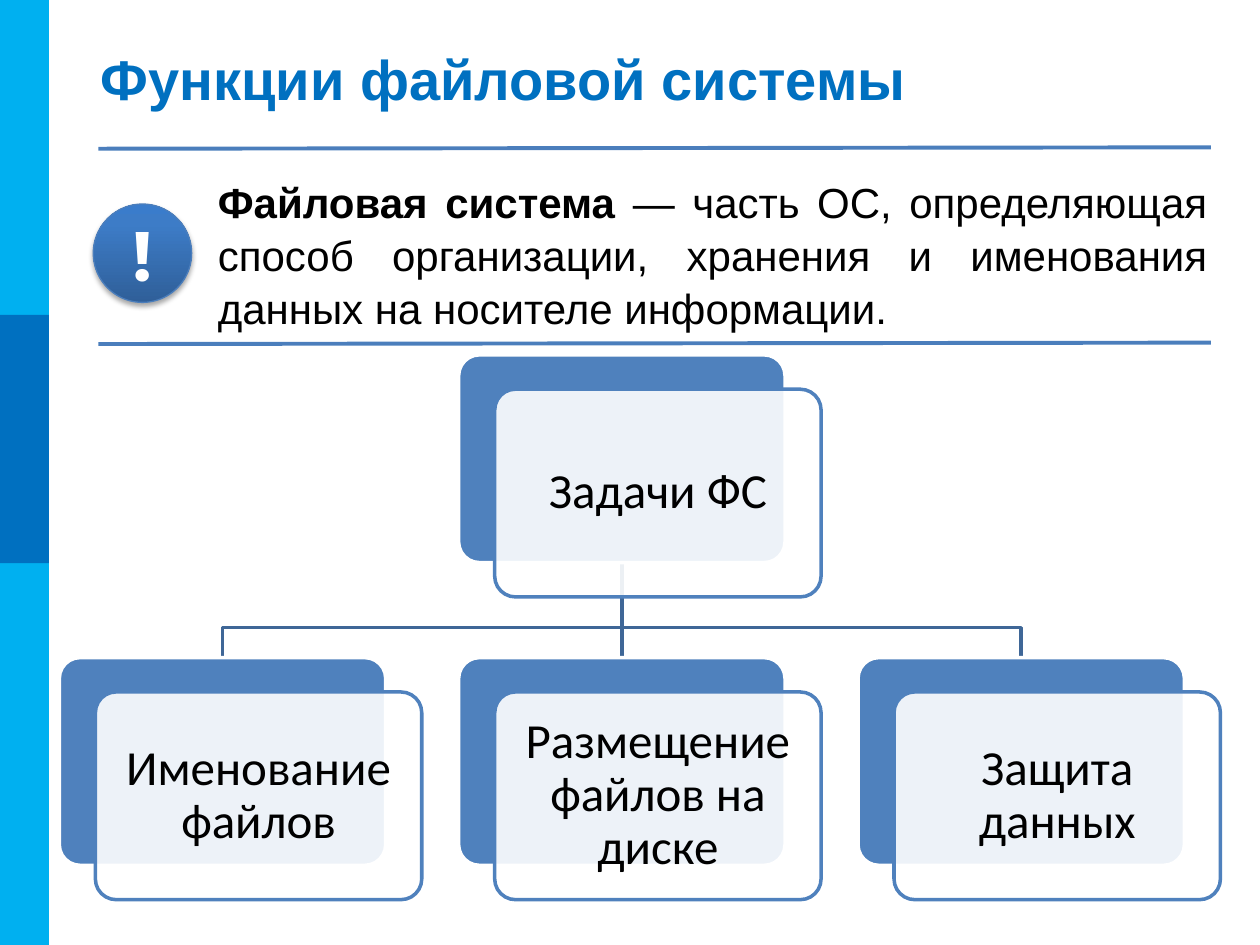
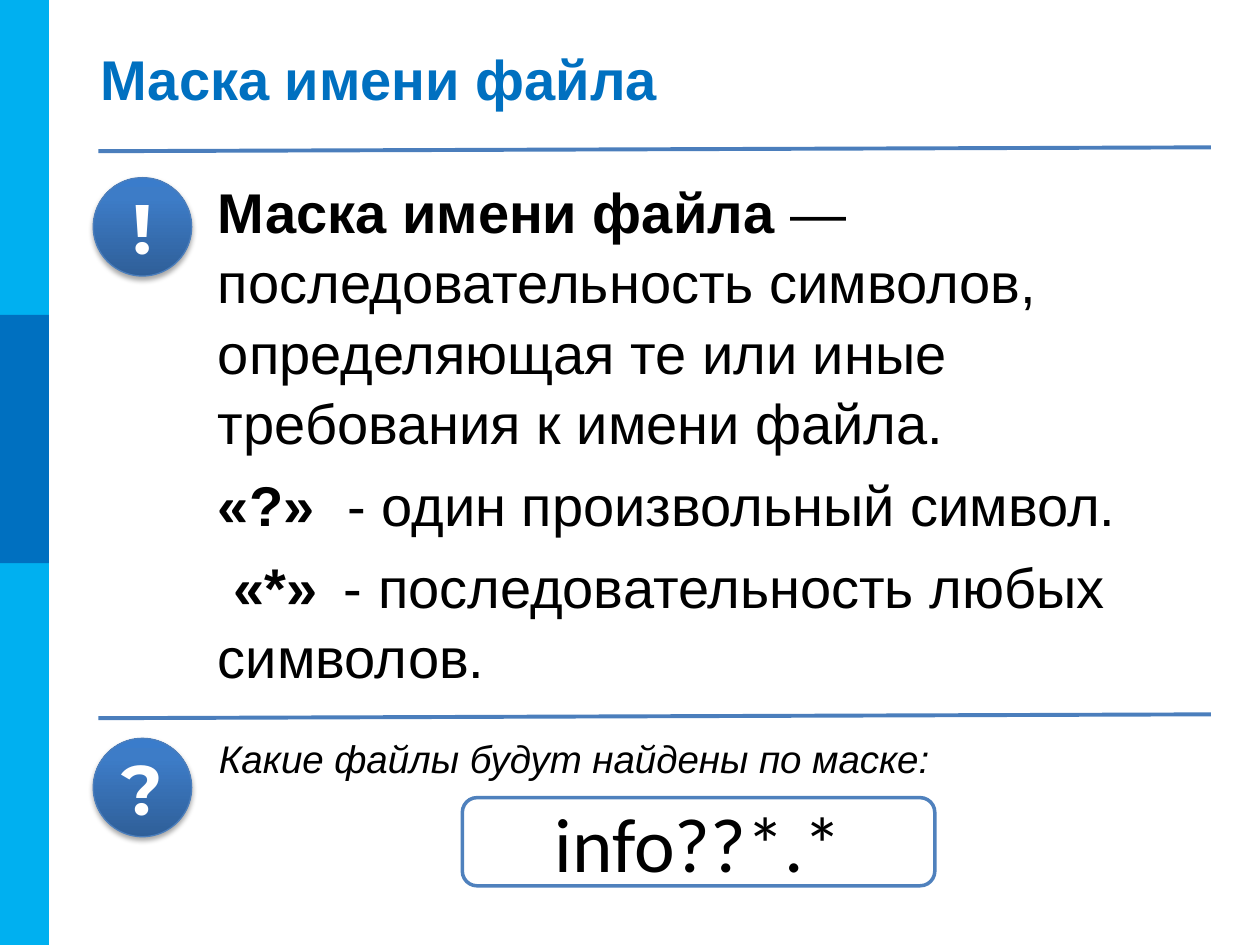
from copy import deepcopy
from dataclasses import dataclass, field

from lxml import etree
from pptx import Presentation
from pptx.dml.color import RGBColor
from pptx.enum import shapes, text
from pptx.oxml import ns
from pptx.util import Pt


@dataclass(frozen=True)
class Theme:
    sky: str = "00B0F0"
    blue: str = "0070C0"
    rule: str = "4B7EBC"
    card: str = "4F81BD"
    branch: str = "3F6797"
    white: str = "FFFFFF"
    black: str = "000000"
    badge_stops: tuple = ((0, "2F5F99"), (0.8, "3D7CC7"), (1, "3A7CCB"))
    body_font: str = "Arial"
    card_font: str = "Calibri"
    badge_font: str = "Montserrat"
    title_size: float = 32
    definition_size: float = 24
    question_size: float = 22
    card_size: float = 28
    symbol_size: float = 40
    mask_size: float = 44


THEME = Theme()


@dataclass(frozen=True)
class Box:
    """Position and size in points."""
    left: float
    top: float
    width: float
    height: float

    def emu(self) -> list:
        return [Pt(v) for v in (self.left, self.top, self.width, self.height)]

    def shifted(self, dx: float, dy: float) -> "Box":
        return Box(self.left + dx, self.top + dy, self.width, self.height)

    @property
    def middle(self) -> float:
        return self.left + self.width / 2

    @property
    def bottom(self) -> float:
        return self.top + self.height


@dataclass(frozen=True)
class Style:
    size: float
    font: str = THEME.body_font
    color: str = THEME.black
    bold: bool = False
    italic: bool = False
    align: text.PP_ALIGN = text.PP_ALIGN.LEFT
    spacing: float = 1.0


@dataclass(frozen=True)
class Line:
    """A paragraph: a bold lead, then plain words."""
    rest: str
    lead: str = ""
    indent: float = 0
    tab: float = 0


@dataclass(frozen=True)
class Badge:
    symbol: str
    top: float


@dataclass(frozen=True)
class Frame:
    """What every slide carries besides its own content."""
    title: str
    rules: list = field(default_factory=list)  # (left y, right y)
    badges: list = field(default_factory=list)


CENTER, JUSTIFY = text.PP_ALIGN.CENTER, text.PP_ALIGN.JUSTIFY
TITLE = Style(THEME.title_size, color=THEME.blue, bold=True)
DEFINITION = Style(THEME.definition_size, align=JUSTIFY, spacing=1.05)
MASK_NOTES = Style(THEME.title_size, spacing=1.05)
QUESTION = Style(THEME.question_size, italic=True, align=JUSTIFY)
SYMBOL = Style(THEME.symbol_size, THEME.badge_font, THEME.white, True, align=CENTER)
CARD = Style(THEME.card_size, THEME.card_font, align=CENTER, spacing=0.9)
MASK = Style(THEME.mask_size, THEME.card_font, align=CENTER)


def rgb(color: str) -> RGBColor:
    return RGBColor.from_string(color)


def add_xml(parent, tag: str, **attributes):
    child = etree.SubElement(parent, ns.qn(tag))
    for key, value in attributes.items():
        child.set(key, str(value))
    return child


# Text

def write(shape, lines: list, style: Style, inset: tuple = (7.2, 3.6), middle: bool = False) -> None:
    frame = shape.text_frame
    frame.word_wrap = True
    frame.margin_left = frame.margin_right = Pt(inset[0])
    frame.margin_top = frame.margin_bottom = Pt(inset[1])
    frame.vertical_anchor = text.MSO_ANCHOR.MIDDLE if middle else text.MSO_ANCHOR.TOP
    for number, line in enumerate(lines):
        paragraph = frame.add_paragraph() if number else frame.paragraphs[0]
        properties = paragraph._p.get_or_add_pPr()
        if line.indent:
            properties.set("indent", str(Pt(line.indent)))
        if line.tab:
            stops = add_xml(properties, "a:tabLst")
            add_xml(stops, "a:tab", pos=Pt(line.tab), algn="l")
        if line.lead:
            lead = paragraph.add_run()
            lead.text = line.lead
            lead.font.bold = True
        paragraph.add_run().text = line.rest
        paragraph.alignment = style.align
        paragraph.line_spacing = style.spacing
        if number:
            paragraph.space_before = Pt(style.size * 0.2)
        font = paragraph.font
        font.name, font.size = style.font, Pt(style.size)
        font.bold, font.italic = style.bold, style.italic
        font.color.rgb = rgb(style.color)


def add_text(slide, box: Box, lines: list, style: Style, middle: bool = False) -> None:
    write(slide.shapes.add_textbox(*box.emu()), lines, style, middle=middle)


# Shapes

def set_line(shape, color: str, width: float) -> None:
    shape.line.color.rgb = rgb(color)
    shape.line.width = Pt(width)


def add_shape(slide, kind, box: Box, fill: str, line: str = "", width: float = 2):
    shape = slide.shapes.add_shape(kind, *box.emu())
    shape.shadow.inherit = False
    shape.fill.solid()
    shape.fill.fore_color.rgb = rgb(fill)
    if line:
        set_line(shape, line, width)
    else:
        shape.line.fill.background()
    return shape


def add_line(slide, start: tuple, end: tuple, color: str, width: float):
    line = slide.shapes.add_connector(
        shapes.MSO_CONNECTOR.STRAIGHT, *[Pt(v) for v in (*start, *end)])
    set_line(line, color, width)
    add_xml(line._element.spPr, "a:effectLst")
    return line


def add_badge(slide, badge: Badge) -> None:
    circle = add_shape(slide, shapes.MSO_SHAPE.OVAL, Box(53.3, badge.top, 56.2, 56.2),
                       THEME.blue, THEME.rule, 0.75)
    circle.fill.gradient()
    circle.fill.gradient_angle = 90
    stops = circle._element.spPr.find(".//" + ns.qn("a:gsLst"))
    stops.insert(1, deepcopy(stops[0]))
    for stop, (position, color) in zip(circle.fill.gradient_stops, THEME.badge_stops):
        stop.position = position
        stop.color.rgb = rgb(color)
    effects = circle._element.spPr.find(ns.qn("a:effectLst"))
    shadow = add_xml(effects, "a:outerShdw", blurRad=Pt(3.1), dist=Pt(1.8),
                     dir=5400000, rotWithShape=0)
    shade = add_xml(shadow, "a:srgbClr", val=THEME.black)
    add_xml(shade, "a:alpha", val=35000)
    write(circle, [Line(badge.symbol)], SYMBOL, (0, 0), middle=True)


def add_frame(deck, frame: Frame):
    slide = deck.slides.add_slide(deck.slide_layouts[6])
    for box, color in ((Box(0, 0, 28, 540), THEME.sky), (Box(0, 180, 28, 141.8), THEME.blue)):
        add_shape(slide, shapes.MSO_SHAPE.RECTANGLE, box, color)
    add_text(slide, Box(50.4, 21.6, 649.4, 46), [Line(frame.title)], TITLE, middle=True)
    for left_y, right_y in frame.rules:
        add_line(slide, (56.2, left_y), (692, right_y), THEME.rule, 2.25)
    for badge in frame.badges:
        add_badge(slide, badge)
    return slide


# Task tree

def add_card(slide, box: Box, words: str):
    kind = shapes.MSO_SHAPE.ROUNDED_RECTANGLE
    back = add_shape(slide, kind, box, THEME.card, THEME.white)
    front = add_shape(slide, kind, box.shifted(20.6, 19.6), THEME.white, THEME.card)
    back.adjustments[0] = front.adjustments[0] = 0.1
    tint = front._element.spPr.find(ns.qn("a:solidFill"))[0]
    add_xml(tint, "a:alpha", val=90000)
    write(front, [Line(words)], CARD, (8.6, 8.6), middle=True)
    return back


def add_side_branch(slide, parent: Box, child: Box) -> None:
    bend = parent.bottom + 37.2
    builder = slide.shapes.build_freeform(Pt(parent.middle), Pt(parent.bottom))
    corners = ((parent.middle, bend), (child.middle, bend), (child.middle, child.top))
    builder.add_line_segments([(Pt(x), Pt(y)) for x, y in corners], close=False)
    branch = builder.convert_to_shape()
    branch.shadow.inherit = False
    branch.fill.background()
    set_line(branch, THEME.branch, 2)


def add_task_tree(slide, root: str, tasks: list) -> None:
    width, height, step = 186.5, 118.7, 228.2
    boxes = [Box(33.9 + i * step, 375.8, width, height) for i in range(len(tasks))]
    centre = len(tasks) // 2
    parent = Box(boxes[centre].left, 202.8, width, height)
    # Branches lie behind the cards
    for i, child in enumerate(boxes):
        if i != centre:
            add_side_branch(slide, parent, child)
    trunk = add_line(slide, (parent.middle, parent.bottom),
                     (parent.middle, boxes[centre].top), THEME.branch, 2)
    root_card = add_card(slide, parent, root)
    task_cards = [add_card(slide, box, task) for box, task in zip(boxes, tasks)]
    trunk.begin_connect(root_card, 2)
    trunk.end_connect(task_cards[centre], 0)


# Slides

def add_functions_slide(deck) -> None:
    slide = add_frame(deck, Frame("Функции файловой системы",
                                  [(85, 84.2), (196.6, 195.8)], [Badge("!", 116.6)]))
    add_text(slide, Box(117.4, 95.8, 579.6, 101.5), [
        Line("— часть ОС, определяющая способ организации, хранения и именования "
             "данных на носителе информации.", "Файловая система "),
    ], DEFINITION)
    add_task_tree(slide, "Задачи ФС",
                  ["Именование файлов", "Размещение файлов на диске", "Защита данных"])


def add_mask_slide(deck) -> None:
    slide = add_frame(deck, Frame("Маска имени файла", [(86.4, 84.2), (410.4, 408.2)],
                                  [Badge("!", 101.5), Badge("?", 421.9)]))
    add_text(slide, Box(117.4, 95.8, 579.6, 298), [
        Line(" — последовательность символов, определяющая те или иные "
             "требования к имени файла.", "Маска имени файла"),
        Line("\t- один произвольный символ.", "«?»", tab=74),
        Line("\t- последовательность любых символов.", "«*»", indent=9, tab=76),
    ], MASK_NOTES)
    add_text(slide, Box(118, 416.2, 573.8, 39.6),
             [Line("Какие файлы будут найдены по маске:")], QUESTION)
    mask = add_shape(slide, shapes.MSO_SHAPE.ROUNDED_RECTANGLE,
                     Box(264.2, 455.8, 270, 50.4), THEME.white, THEME.card)
    write(mask, [Line("info??*.*")], MASK, (5.8, 2.9), middle=True)


def main() -> None:
    deck = Presentation()
    deck.slide_width, deck.slide_height = Pt(720), Pt(540)
    add_functions_slide(deck)
    add_mask_slide(deck)
    deck.save("out.pptx")


if __name__ == "__main__":
    main()
